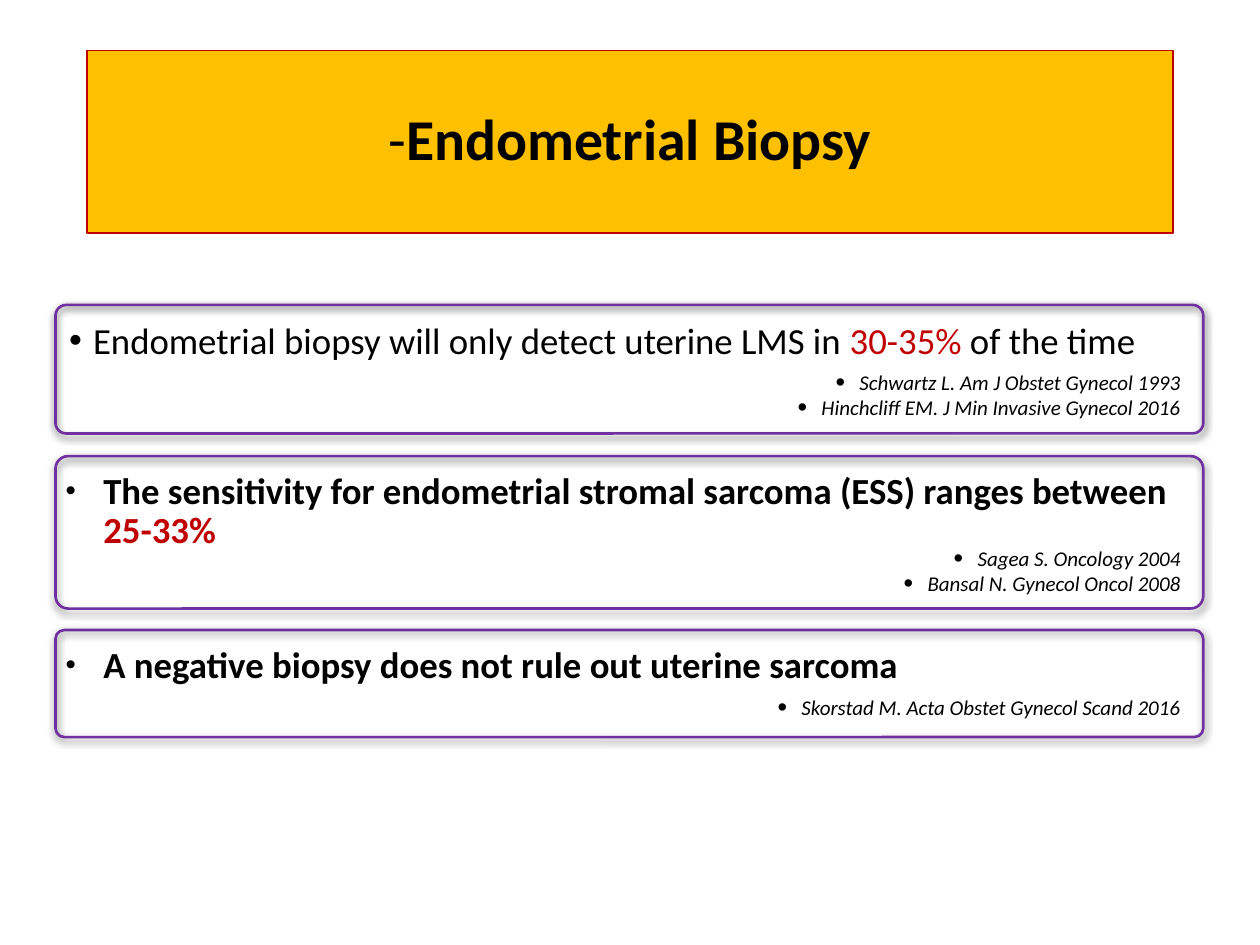
import pptx
import pptx.util
import pptx.dml.color
import pptx.enum.shapes
import pptx.enum.text
import pptx.oxml
import pptx.oxml.ns
from lxml import etree

Inches, Pt = pptx.util.Inches, pptx.util.Pt
Align, Anchor = pptx.enum.text.PP_ALIGN, pptx.enum.text.MSO_ANCHOR
Shape = pptx.enum.shapes.MSO_SHAPE
qn = pptx.oxml.ns.qn

THEME = dict(font="Calibri", ink="000000", accent="C00000", gold="FFC000",
             frame="7030A0", title=33, point=21, cite=12)

# Text is a list of (words, style) runs, style being "", "b", "i" or "a" (accent).
TITLE = [("-", ""), ("Endometrial Biopsy", "b")]
PLAIN = dict(indent=0.19, size=100, inset=(0.1, 0.05))
STRONG = dict(indent=0.3, size=80, inset=(0.07, 0.04))
CARDS = [
    dict(top=2.42, high=1.02, point_at=(2.51, 0.41), cite_at=(2.84, 0.54), look=PLAIN,
         point=[("Endometrial biopsy will only detect uterine LMS in ", ""),
                ("30-35%", "a"), (" of the time", "")],
         cites=["Schwartz L. Am J Obstet Gynecol 1993",
                "Hinchcliff EM. J Min Invasive Gynecol 2016"]),
    dict(top=3.62, high=1.21, point_at=(3.71, 0.67), cite_at=(4.24, 0.54), look=STRONG,
         point=[("The sensitivity for endometrial stromal sarcoma (ESS) ranges between ", "b"),
                ("25-33%", "ab")],
         cites=["Sagea S. Oncology 2004", "Bansal N. Gynecol Oncol 2008"]),
    dict(top=5, high=0.85, point_at=(5.09, 0.41), cite_at=(5.48, 0.28), look=STRONG,
         point=[("A negative biopsy does not rule out uterine sarcoma", "b")],
         cites=["Skorstad M. Acta Obstet Gynecol Scand 2016"]),
]


def color(name):
    return pptx.dml.color.RGBColor.from_string(THEME[name])


def write(para, runs, kind):
    for words, style in runs:
        run = para.add_run()
        run.text = words
        font = run.font
        font.name, font.size = THEME["font"], Pt(THEME[kind])
        font.bold, font.italic = "b" in style, "i" in style
        font.color.rgb = color("accent" if "a" in style else "ink")


def bullet(para, indent, size):
    props = para._p.get_or_add_pPr()
    props.set("marL", str(Inches(indent)))
    props.set("indent", str(-Inches(indent)))
    etree.SubElement(props, qn("a:buSzPct"), val=str(size * 1000))
    etree.SubElement(props, qn("a:buFont"), typeface="Arial")
    etree.SubElement(props, qn("a:buChar"), char="•")


def add_box(slide, left, top, wide, high, inset=(0.1, 0.05)):
    box = slide.shapes.add_textbox(Inches(left), Inches(top), Inches(wide), Inches(high))
    frame = box.text_frame
    frame.word_wrap = True
    frame.margin_left = frame.margin_right = Inches(inset[0])
    frame.margin_top = frame.margin_bottom = Inches(inset[1])
    return frame


def add_frame(slide, top, high):
    """Draw the rounded outline of a card, with a soft shadow below."""
    shape = slide.shapes.add_shape(Shape.ROUNDED_RECTANGLE, Inches(0.44), Inches(top),
                                   Inches(9.11), Inches(high))
    shape.adjustments[0] = 0.083
    shape.fill.background()
    shape.line.color.rgb = color("frame")
    shape.line.width = Pt(1.5)
    shape.shadow.inherit = False
    effects = shape._element.spPr.find(qn("a:effectLst"))
    shadow = etree.SubElement(effects, qn("a:outerShdw"), blurRad=str(Pt(4.5)),
                              dist=str(Pt(1.5)), dir="5400000", algn="ctr", rotWithShape="0")
    tint = etree.SubElement(shadow, qn("a:srgbClr"), val=THEME["ink"])
    etree.SubElement(tint, qn("a:alpha"), val="63000")


def add_card(slide, card):
    look = card["look"]
    top, high = card["point_at"]
    para = add_box(slide, 0.45, top, 9.11, high, look["inset"]).paragraphs[0]
    bullet(para, look["indent"], look["size"])
    para.line_spacing = 0.9
    write(para, card["point"], "point")

    top, high = card["cite_at"]
    frame = add_box(slide, 3.91, top, 5.56, high)
    frame.vertical_anchor = Anchor.BOTTOM
    for i, cite in enumerate(card["cites"]):
        para = frame.add_paragraph() if i else frame.paragraphs[0]
        bullet(para, 0.19, 130)
        para.alignment = Align.RIGHT
        write(para, [(cite, "i")], "cite")
    add_frame(slide, card["top"], card["high"])


def add_title(slide):
    title = slide.shapes.title
    title.left, title.top = Inches(0.69), Inches(0.4)
    title.width, title.height = Inches(8.62), Inches(1.45)
    title.fill.solid()
    title.fill.fore_color.rgb = color("gold")
    title.line.color.rgb = color("accent")
    title.line.width = Pt(0.75)
    title.text_frame.vertical_anchor = Anchor.MIDDLE
    para = title.text_frame.paragraphs[0]
    para.alignment = Align.CENTER
    para.line_spacing = 0.9
    write(para, TITLE, "title")


def main():
    deck = pptx.Presentation()
    deck.slide_width, deck.slide_height = Inches(10), Inches(7.5)
    slide = deck.slides.add_slide(deck.slide_layouts[5])
    add_title(slide)
    for card in CARDS:
        add_card(slide, card)
    deck.save("out.pptx")


if __name__ == "__main__":
    main()
